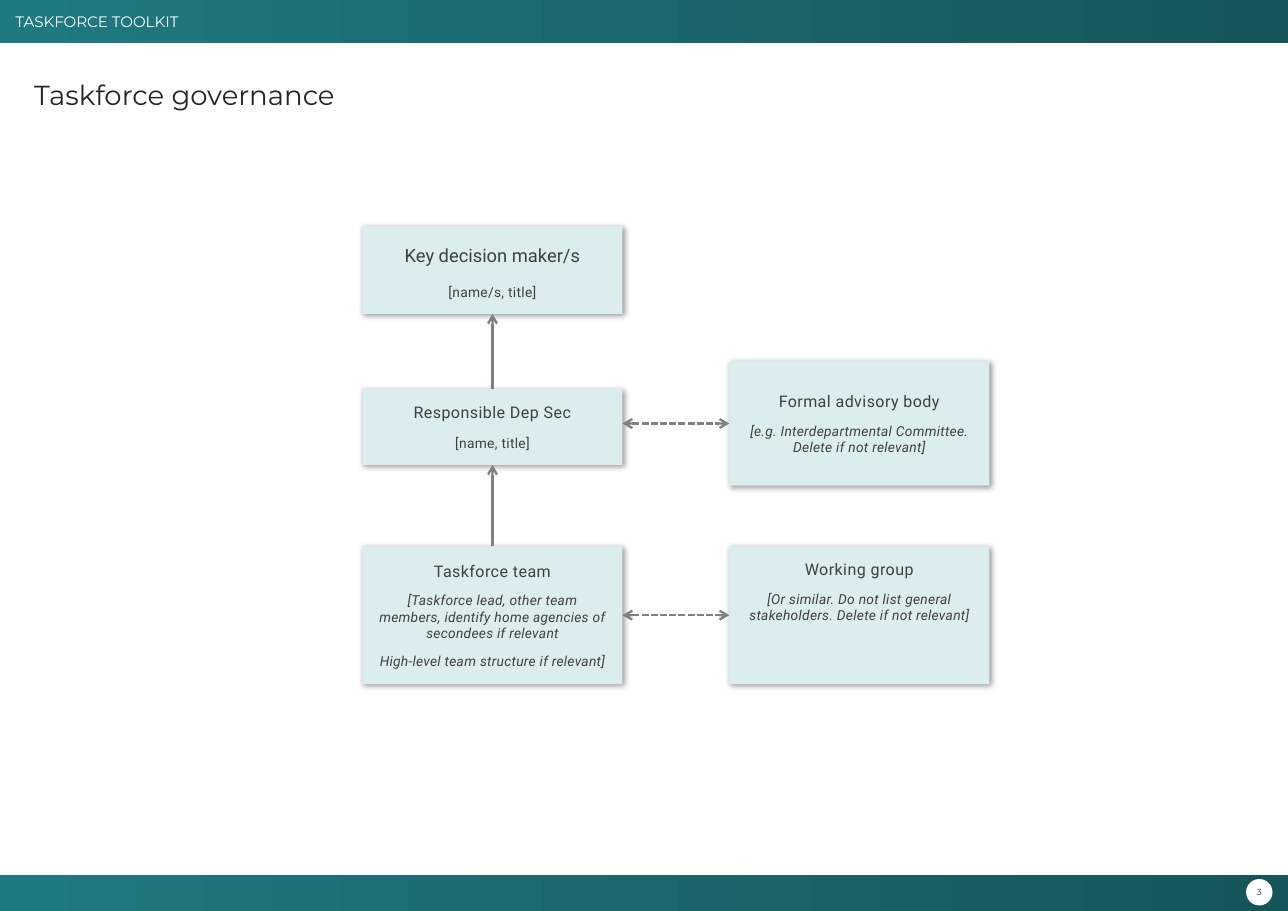
import pptx
import pptx.util
import pptx.dml.color
import pptx.enum.shapes
import pptx.enum.text
import pptx.oxml
import pptx.oxml.ns

Inches = pptx.util.Inches
Pt = pptx.util.Pt
SHAPE = pptx.enum.shapes.MSO_SHAPE
ANCHOR = pptx.enum.text.MSO_ANCHOR
ALIGN = pptx.enum.text.PP_ALIGN

PAGE_WIDTH = 11.69
BOX_WIDTH = 2.36
TEAM_LEFT = 3.29
ADVICE_LEFT = 6.62
TEAM_TOP = 4.96
TEAM_HEIGHT = 1.25
SHADOW = (
    '<a:effectLst %s><a:outerShdw blurRad="50800" dist="19050" dir="2700000" '
    'algn="tl" rotWithShape="0"><a:srgbClr val="000000"><a:alpha val="40000"/>'
    '</a:srgbClr></a:outerShdw></a:effectLst>' % pptx.oxml.ns.nsdecls("a")
)


def colour(value):
    return pptx.dml.color.RGBColor.from_string(value)


def style_para(para, text, size, face, ink, spacing=0, italic=False):
    para.text = text
    font = para.font
    font.size = Pt(size)
    font.name = face
    font.color.rgb = colour(ink)
    font.italic = italic
    if spacing:
        para._p.pPr.defRPr.set("spc", str(round(spacing * 100)))


def set_frame(frame, insets, anchor, wrap=True):
    frame.margin_left, frame.margin_top, frame.margin_right, frame.margin_bottom = map(Inches, insets)
    frame.vertical_anchor = anchor
    frame.word_wrap = wrap


def add_plain_shape(page, kind, left, top, width, height):
    shape = page.shapes.add_shape(kind, Inches(left), Inches(top), Inches(width), Inches(height))
    shape.shadow.inherit = False
    shape.line.fill.background()
    return shape


def add_band(page, top, height):
    band = add_plain_shape(page, SHAPE.RECTANGLE, 0, top, PAGE_WIDTH, height)
    band.fill.gradient()
    band.fill.gradient_angle = 0
    for stop, value in zip(band.fill.gradient_stops, ("1F7980", "16555A")):
        stop.color.rgb = colour(value)
    return band


def add_header(page):
    frame = add_band(page, 0, 0.39).text_frame
    set_frame(frame, (0.14, 0.06, 0.07, 0.06), ANCHOR.MIDDLE)
    para = frame.paragraphs[0]
    para.alignment = ALIGN.LEFT
    style_para(para, "TASKFORCE TOOLKIT", 9.9, "Montserrat", "FFFFFF")


def add_footer(page):
    add_band(page, 7.94, 0.33)
    badge = add_plain_shape(page, SHAPE.OVAL, 11.31, 7.98, 0.24, 0.24)
    badge.fill.solid()
    badge.fill.fore_color.rgb = colour("FFFFFF")
    set_frame(badge.text_frame, (0, 0, 0, 0), ANCHOR.MIDDLE, False)
    para = badge.text_frame.paragraphs[0]
    para.alignment = ALIGN.CENTER
    style_para(para, "3", 5.7, "Montserrat", "222A35")


def add_title(page, text):
    box = page.shapes.add_textbox(Inches(0.31), Inches(0.68), Inches(7.81), Inches(0.74))
    set_frame(box.text_frame, (0, 0, 0, 0), ANCHOR.TOP)
    para = box.text_frame.paragraphs[0]
    para.line_spacing = 1.1
    style_para(para, text, 18, "Montserrat", "262626")


def add_box(page, left, top, height, heading, details, italic=True,
            anchor=ANCHOR.MIDDLE, size=10.5, spacing=0.3,
            before=0, after=(7.5, 7.5), leading=(1.0, 1.0)):
    box = add_plain_shape(page, SHAPE.RECTANGLE, left, top, BOX_WIDTH, height)
    box.fill.solid()
    box.fill.fore_color.rgb = colour("DBEDEE")
    properties = box._element.spPr
    properties.remove(properties.find(pptx.oxml.ns.qn("a:effectLst")))
    properties.append(pptx.oxml.parse_xml(SHADOW))
    frame = box.text_frame
    set_frame(frame, (0.12, 0.12, 0.12, 0.12), anchor)
    for index, text in enumerate([heading, *details]):
        para = frame.add_paragraph() if index else frame.paragraphs[0]
        para.alignment = ALIGN.CENTER
        para.space_before = Pt(before)
        para.space_after = Pt(after[min(index, 1)])
        para.line_spacing = leading[min(index, 1)]
        if index:
            style_para(para, text, 9, "Roboto", "404040", 0.2, italic)
        else:
            style_para(para, text, size, "Roboto", "404040", spacing)
    return box


def add_arrow(page, start, end, two_way=False):
    arrow = page.shapes.add_connector(pptx.enum.shapes.MSO_CONNECTOR.STRAIGHT, *start, *end)
    arrow.line.color.rgb = colour("808080")
    arrow.line.width = Pt(1.5)
    if two_way:
        arrow.line.dash_style = pptx.enum.dml.MSO_LINE.SQUARE_DOT
    line = arrow.line._get_or_add_ln()
    for tag in ("a:headEnd", "a:tailEnd") if two_way else ("a:tailEnd",):
        tip = pptx.oxml.parse_xml("<%s %s/>" % (tag, pptx.oxml.ns.nsdecls("a")))
        tip.set("type", "arrow")
        line.append(tip)
    arrow._element.spPr.append(pptx.oxml.parse_xml("<a:effectLst %s/>" % pptx.oxml.ns.nsdecls("a")))
    return arrow


def report_up(page, lower, upper):
    middle = lower.left + lower.width // 2
    arrow = add_arrow(page, (middle, lower.top), (middle, upper.top + upper.height))
    arrow.begin_connect(lower, 0)
    arrow.end_connect(upper, 2)


def consult(page, team, adviser):
    level = adviser.top + adviser.height // 2
    arrow = add_arrow(page, (team.left + team.width, level), (adviser.left, level), True)
    if level == team.top + team.height // 2:
        arrow.begin_connect(team, 3)
    arrow.end_connect(adviser, 1)


def main():
    deck = pptx.Presentation()
    deck.slide_width = Inches(PAGE_WIDTH)
    deck.slide_height = Inches(8.27)
    page = deck.slides.add_slide(deck.slide_layouts[6])
    add_header(page)
    add_footer(page)
    add_title(page, "Taskforce governance")
    decision = add_box(page, TEAM_LEFT, 2.05, 0.8, "Key decision maker/s", ["[name/s, title]"],
                       italic=False, size=12, spacing=0, before=1.5,
                       after=(8, 8), leading=(1.2, 1.2))
    secretary = add_box(page, TEAM_LEFT, 3.53, 0.69, "Responsible Dep Sec", ["[name, title]"],
                        italic=False, after=(7.5, 6), leading=(1.0, 1.1))
    team = add_box(page, TEAM_LEFT, TEAM_TOP, TEAM_HEIGHT, "Taskforce team", [
        "[Taskforce lead, other team members, identify home agencies of secondees if relevant",
        "High-level team structure if relevant]"])
    group = add_box(page, ADVICE_LEFT, TEAM_TOP, TEAM_HEIGHT, "Working group", [
        "[Or similar. Do not list general stakeholders. Delete if not relevant]"],
        anchor=ANCHOR.TOP)
    advisory = add_box(page, ADVICE_LEFT, 3.28, 1.13, "Formal advisory body", [
        "[e.g. Interdepartmental Committee. Delete if not relevant]"])
    report_up(page, secretary, decision)
    report_up(page, team, secretary)
    consult(page, team, group)
    consult(page, secretary, advisory)
    deck.save("out.pptx")


if __name__ == "__main__":
    main()
